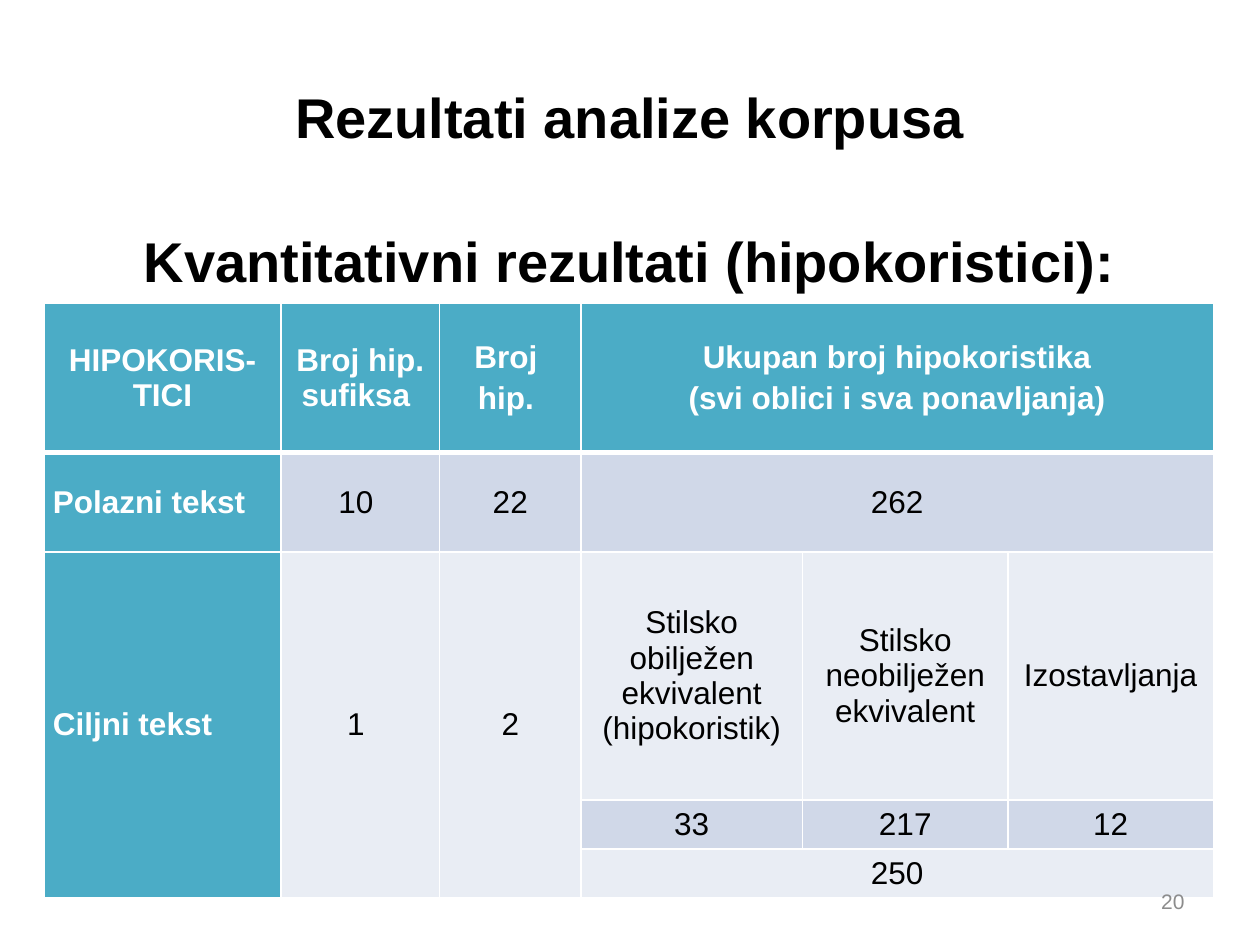
from dataclasses import dataclass

from lxml import etree
from pptx import Presentation
from pptx import util as u
from pptx.dml.color import RGBColor
from pptx.enum import text
from pptx.oxml import ns


@dataclass(frozen=True)
class Theme:
    font: str = "Arial"
    accent: str = "4BACC6"
    band_dark: str = "D0D8E8"
    band_light: str = "E9EDF4"
    white: str = "FFFFFF"
    black: str = "000000"
    grey: str = "8C8C8C"
    heading: int = 32
    table: int = 18
    number: int = 12


T = Theme()
LEFT, CENTER, RIGHT = (text.PP_ALIGN.LEFT, text.PP_ALIGN.CENTER,
                       text.PP_ALIGN.RIGHT)
TOP, MIDDLE = text.MSO_ANCHOR.TOP, text.MSO_ANCHOR.MIDDLE

COLUMNS = [1.88, 1.26, 1.12, 1.76, 1.63, 1.63]
ROWS = [1.18, 0.79, 1.97, 0.39, 0.39]
BANDS = [T.accent, T.band_dark, T.band_light, T.band_dark, T.band_light]
# (row, column): (row span, column span)
SPANS = {(0, 3): (1, 3), (1, 3): (1, 3), (4, 3): (1, 3),
         (2, 0): (3, 1), (2, 1): (3, 1), (2, 2): (3, 1)}
CONTENT = [
    ["HIPOKORIS-TICI", "Broj hip. sufiksa ", "Broj \nhip. ",
     "Ukupan broj hipokoristika\n(svi oblici i sva ponavljanja)", "", ""],
    ["Polazni tekst", "10 ", "22", "262", "", ""],
    ["Ciljni tekst", "1 ", "2", "Stilsko obilježen ekvivalent (hipokoristik)",
     "Stilsko neobilježen ekvivalent", "Izostavljanja"],
    ["", "", "", "33", "217", "12"],
    ["", "", "", "250", "", ""],
]


def set_attrs(obj, values):
    for name, value in values.items():
        setattr(obj, name, value)


def write(tf, content, size, color, bold=False, align=CENTER, after=0):
    """Fill a text frame, one paragraph for each line of content."""
    for i, line in enumerate(content.split("\n")):
        p = tf.paragraphs[0] if i == 0 else tf.add_paragraph()
        set_attrs(p, {"alignment": align, "space_after": u.Pt(after)})
        r = p.add_run()
        r.text = line
        set_attrs(r.font, {"name": T.font, "size": u.Pt(size), "bold": bold})
        r.font.color.rgb = RGBColor.from_string(color)


def add_text(s, box, content, anchor, **style):
    tf = s.shapes.add_textbox(*map(u.Inches, box)).text_frame
    set_attrs(tf, {"word_wrap": True, "vertical_anchor": anchor})
    write(tf, content, **style)


def set_borders(cell, widths):
    tc_pr = cell._tc.get_or_add_tcPr()
    for side, width in widths.items():
        ln = etree.SubElement(tc_pr, ns.qn(f"a:ln{side}"), w=str(u.Pt(width)))
        fill = etree.SubElement(ln, ns.qn("a:solidFill"))
        etree.SubElement(fill, ns.qn("a:srgbClr"), val=T.white)


def format_cell(cell, row, col, content):
    is_header = row == 0 or col == 0
    set_attrs(cell, {"vertical_anchor": MIDDLE,
                     "margin_left": u.Inches(0.07),
                     "margin_right": u.Inches(0.07),
                     "margin_top": 0, "margin_bottom": 0})
    set_borders(cell, {"L": 1, "R": 1, "T": 3 if row == 1 else 1,
                       "B": 3 if row == 0 else 1})
    cell.fill.solid()
    cell.fill.fore_color.rgb = RGBColor.from_string(
        T.accent if is_header else BANDS[row])
    if content:
        write(cell.text_frame, content, T.table,
              T.white if is_header else T.black, bold=is_header,
              align=LEFT if col == 0 and row > 0 else CENTER, after=3)


def add_results_table(s, left, top):
    table = s.shapes.add_table(
        len(ROWS), len(COLUMNS), u.Inches(left), u.Inches(top),
        u.Inches(sum(COLUMNS)), u.Inches(sum(ROWS))).table
    for column, width in zip(table.columns, COLUMNS):
        column.width = u.Inches(width)
    for row, height in zip(table.rows, ROWS):
        row.height = u.Inches(height)
    for i, line in enumerate(CONTENT):
        for j, content in enumerate(line):
            format_cell(table.cell(i, j), i, j, content)
    for (i, j), (down, across) in SPANS.items():
        table.cell(i, j).merge(table.cell(i + down - 1, j + across - 1))


def main():
    prs = Presentation()
    set_attrs(prs, {"slide_width": u.Inches(10),
                    "slide_height": u.Inches(7.5)})
    s = prs.slides.add_slide(prs.slide_layouts[6])
    heading = {"size": T.heading, "color": T.black, "bold": True}
    add_text(s, (0.5, 0.3, 9, 1.25), "Rezultati analize korpusa",
             MIDDLE, **heading)
    add_text(s, (0.5, 1.75, 9, 4.95),
             "Kvantitativni rezultati (hipokoristici):", TOP, **heading)
    add_results_table(s, 0.35, 2.41)
    add_text(s, (7.17, 6.95, 2.33, 0.4), "20", MIDDLE,
             size=T.number, color=T.grey, align=RIGHT)
    prs.save("out.pptx")


if __name__ == "__main__":
    main()
